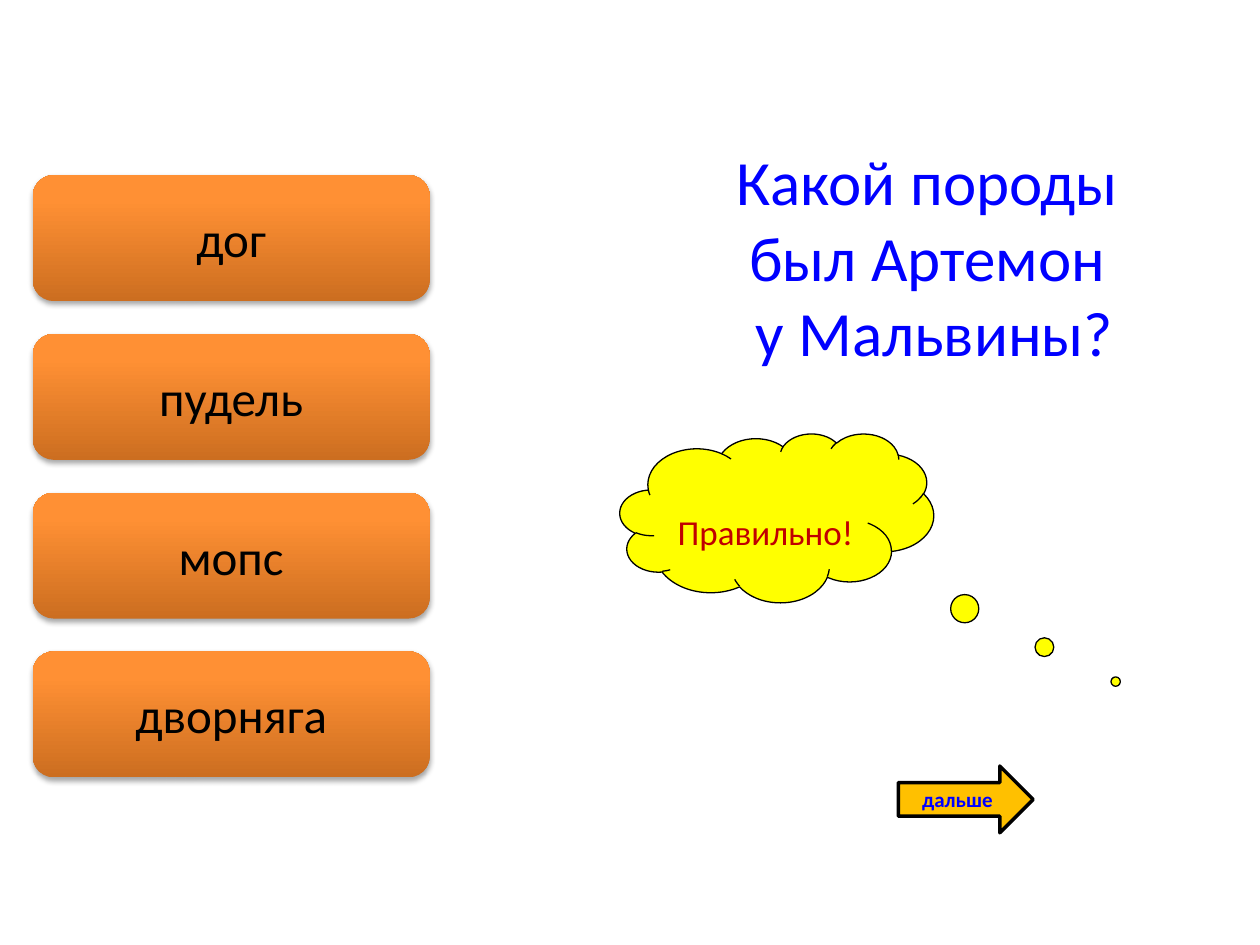
from copy import deepcopy

from pptx import Presentation
from pptx.dml.color import RGBColor
from pptx.enum.shapes import MSO_SHAPE
from pptx.enum.text import MSO_ANCHOR, MSO_AUTO_SIZE, PP_ALIGN
from pptx.oxml import parse_xml
from pptx.oxml.ns import nsdecls, qn
from pptx.util import Inches, Pt

BLACK = RGBColor(0x00, 0x00, 0x00)
BLUE = RGBColor(0x00, 0x00, 0xFF)
RED = RGBColor(0xC0, 0x00, 0x00)
YELLOW = RGBColor(0xFF, 0xFF, 0x00)
AMBER = RGBColor(0xFF, 0xC0, 0x00)
BUTTON_STOPS = [
    (0, RGBColor(0xCC, 0x6E, 0x20)),
    (0.8, RGBColor(0xFF, 0x90, 0x34)),
    (1, RGBColor(0xFF, 0x91, 0x36)),
]
BUTTON_SHADOW = (
    f'<a:effectLst {nsdecls("a")}>'
    '<a:outerShdw blurRad="40000" dist="23000" dir="5400000" rotWithShape="0">'
    '<a:srgbClr val="000000"><a:alpha val="35000"/></a:srgbClr>'
    '</a:outerShdw></a:effectLst>'
)
ANSWERS = ["дог", "пудель", "мопс", "дворняга"]
QUESTION = ["Какой породы ", "был Артемон ", "у Мальвины?"]


def write_text(shape, text, size, color, bold=False):
    text_frame = shape.text_frame
    text_frame.text = text
    text_frame.word_wrap = True
    text_frame.vertical_anchor = MSO_ANCHOR.MIDDLE
    for paragraph in text_frame.paragraphs:
        paragraph.alignment = PP_ALIGN.CENTER
        for run in paragraph.runs:
            run.font.name = "Calibri"
            run.font.size = Pt(size)
            run.font.bold = bold
            run.font.color.rgb = color


def add_outlined_shape(slide, kind, box, fill, line_width):
    shape = slide.shapes.add_shape(kind, *map(Inches, box))
    shape.shadow.inherit = False
    shape.fill.solid()
    shape.fill.fore_color.rgb = fill
    shape.line.color.rgb = BLACK
    shape.line.width = Pt(line_width)
    return shape


def style_button(button):
    button.line.fill.background()
    button.fill.gradient()
    button.fill.gradient_angle = 90
    properties = button._element.spPr
    stop_list = properties.find(qn("a:gradFill")).find(qn("a:gsLst"))
    stop_list.append(deepcopy(stop_list[-1]))
    for stop, (position, color) in zip(button.fill.gradient_stops, BUTTON_STOPS):
        stop.position = position
        stop.color.rgb = color
    properties.append(parse_xml(BUTTON_SHADOW))


def add_answers(slide, left, top, width, height):
    button_height = 1
    pitch = (height - button_height) / (len(ANSWERS) - 1)
    for index, answer in enumerate(ANSWERS):
        button = slide.shapes.add_shape(
            MSO_SHAPE.ROUNDED_RECTANGLE, Inches(left),
            Inches(top + index * pitch), Inches(width), Inches(button_height))
        style_button(button)
        write_text(button, answer, 28, BLACK)


def add_question(slide, left, top, width, height):
    title = slide.shapes.title
    title.left, title.top = Inches(left), Inches(top)
    title.width, title.height = Inches(width), Inches(height)
    write_text(title, "\n".join(QUESTION), 36, BLUE)
    title.text_frame.auto_size = MSO_AUTO_SIZE.SHAPE_TO_FIT_TEXT


def add_feedback(slide, *box):
    cloud = add_outlined_shape(slide, MSO_SHAPE.CLOUD_CALLOUT, box, YELLOW, 0.75)
    cloud.adjustments[0] = 1.08
    cloud.adjustments[1] = 0.97
    write_text(cloud, "Правильно!", 20, RED)
    cloud.text_frame.margin_top = Inches(0.33)


def add_next_arrow(slide, *box):
    arrow = add_outlined_shape(slide, MSO_SHAPE.RIGHT_ARROW, box, AMBER, 2)
    write_text(arrow, "дальше", 12, BLUE, bold=True)


def main():
    presentation = Presentation()
    presentation.slide_width = Inches(10)
    presentation.slide_height = Inches(7.5)
    slide = presentation.slides.add_slide(presentation.slide_layouts[5])
    add_feedback(slide, 4.92, 3.44, 2.49, 1.34)
    add_next_arrow(slide, 7.13, 6.08, 1.07, 0.53)
    add_answers(slide, 0.26, 1.39, 3.15, 4.78)
    add_question(slide, 5.17, 1.07, 4.49, 1.92)
    presentation.save("out.pptx")


if __name__ == "__main__":
    main()
